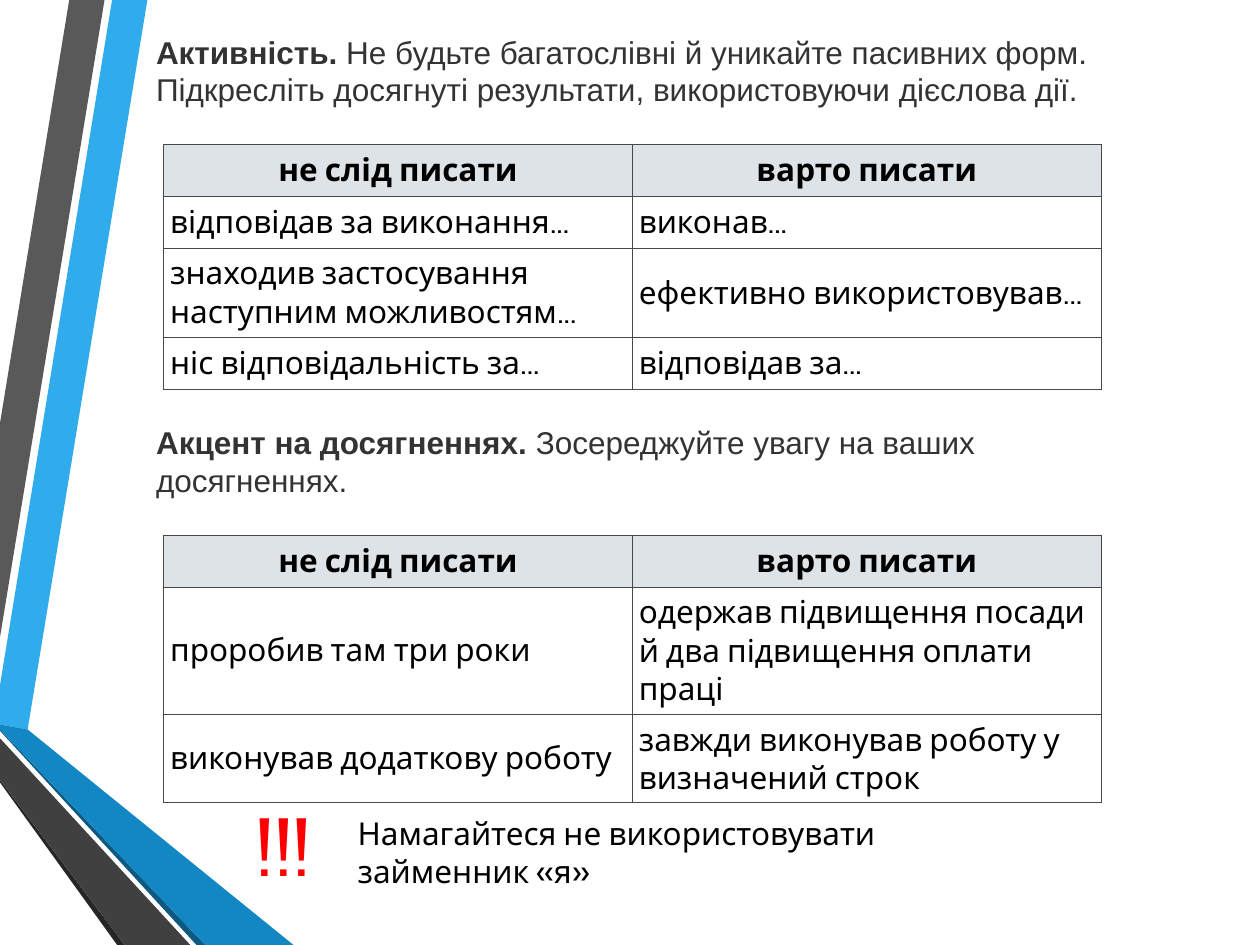
from lxml import etree
from pptx import Presentation
from pptx import util as u
from pptx.dml.color import RGBColor
from pptx.enum import text as t
from pptx.oxml import ns

HUES = {
    "sky": "30ACEC", "grey": "595959", "coal": "262626", "navy": "0C5A82",
    "blue": "1287C3", "dark": "404040", "edge": "484848", "head": "DEE3E7",
    "white": "FFFFFF", "black": "000000", "ink": "333333", "red": "FF0000",
}
COLS, ROWS = 100, 75
BANDS = [
    ("sky", [(0, 54.4), (0, 57.5), (2.2, 57.9), (11.7, 0), (8.9, 0)]),
    ("grey", [(8.3, 0), (5.5, 0), (0, 33.6), (0, 50.6)]),
    ("coal", [(0, 61.9), (0, 62.1), (9.3, 75), (9.9, 75)]),
    ("navy", [(0, 57.9), (0, 58), (15.6, 75), (16.3, 75)]),
    ("blue", [(0, 57.9), (16.3, 75), (23.3, 75), (2.2, 57.9), (0, 57.5)]),
    ("dark", [(0, 61.9), (9.9, 75), (15.1, 75), (0, 58.6)]),
]
HEAD = ("не слід писати", "варто писати")
ACTIVE = [
    HEAD,
    ("відповідав за виконання...", "виконав..."),
    ("знаходив застосування наступним можливостям...", "ефективно використовував..."),
    ("ніс відповідальність за...", "відповідав за..."),
]
RESULT = [
    HEAD,
    ("проробив там три роки", "одержав підвищення посади й два підвищення оплати праці"),
    ("виконував додаткову роботу", "завжди виконував роботу у визначений строк"),
]


def tint(hue):
    return RGBColor.from_string(HUES[hue])


def write(par, words, size=18, face="Cabin", hue="black", bold=False):
    run = par.add_run()
    run.text = words
    font = run.font
    font.size, font.name, font.bold = u.Pt(size), face, bold
    font.color.rgb = tint(hue)


class Deck:
    def __init__(self):
        self.show = Presentation()
        self.show.slide_width, self.show.slide_height = u.Inches(10), u.Inches(7.5)
        self.slide = self.show.slides.add_slide(self.show.slide_layouts[6])

    def x(self, cols):
        return round(self.show.slide_width * cols / COLS)

    def y(self, rows):
        return round(self.show.slide_height * rows / ROWS)

    def box(self, left, top, wide, high):
        return self.x(left), self.y(top), self.x(wide), self.y(high)

    def band(self, hue, spots):
        spots = [(self.x(a), self.y(b)) for a, b in spots]
        pen = self.slide.shapes.build_freeform(*spots[0])
        pen.add_line_segments(spots[1:], close=True)
        form = pen.convert_to_shape()
        form.shadow.inherit = False
        form.fill.solid()
        form.fill.fore_color.rgb = tint(hue)
        form.line.fill.background()

    def note(self, place, *runs):
        frame = self.slide.shapes.add_textbox(*self.box(*place)).text_frame
        frame.word_wrap = True
        for words, style in runs:
            write(frame.paragraphs[0], words, **style)

    def edge(self, cell):
        props = cell._tc.get_or_add_tcPr()
        for spot, side in enumerate(("a:lnL", "a:lnR", "a:lnT", "a:lnB")):
            line = etree.Element(ns.qn(side), w=str(u.Pt(0.75)))
            fill = etree.SubElement(line, ns.qn("a:solidFill"))
            etree.SubElement(fill, ns.qn("a:srgbClr"), val=HUES["edge"])
            props.insert(spot, line)

    def table(self, place, rows, highs):
        place = self.box(*place, sum(highs))
        grid = self.slide.shapes.add_table(len(rows), len(HEAD), *place).table
        for r, (row, high) in enumerate(zip(rows, highs)):
            grid.rows[r].height = self.y(high)
            for c, words in enumerate(row):
                self.cell(grid.cell(r, c), words, r == 0)

    def cell(self, cell, words, head):
        cell.margin_left = cell.margin_right = u.Inches(0.05)
        cell.margin_top = cell.margin_bottom = u.Inches(0.05)
        cell.vertical_anchor = t.MSO_ANCHOR.MIDDLE
        cell.fill.solid()
        cell.fill.fore_color.rgb = tint("head" if head else "white")
        par = cell.text_frame.paragraphs[0]
        par.alignment = t.PP_ALIGN.CENTER if head else t.PP_ALIGN.LEFT
        write(par, words, bold=head)
        self.edge(cell)


def main():
    deck = Deck()
    for hue, spots in BANDS:
        deck.band(hue, spots)
    body = dict(face="Arial", hue="ink")
    lead = dict(body, bold=True)
    deck.table((13, 11.5, 74.4), ACTIVE, (4.1, 4.1, 7.1, 4.1))
    deck.note(
        (11.4, 2.1, 85, 7.1),
        ("Активність.", lead),
        (" Не будьте багатослівні й уникайте пасивних форм. "
         "Підкресліть досягнуті результати, використовуючи дієслова дії.", body),
    )
    deck.note(
        (11.4, 33.1, 81.9, 7.1),
        ("Акцент на досягненнях. ", lead),
        ("Зосереджуйте увагу на ваших досягненнях.", body),
    )
    deck.table((13, 42.5, 74.4), RESULT, (4.1, 10.1, 7))
    deck.note((19.3, 63, 10.2, 8.4), ("!!!", dict(size=44, hue="red")))
    deck.note(
        (27.4, 64.1, 50, 7.1),
        ("Намагайтеся не використовувати займенник «я»", {}),
    )
    deck.show.save("out.pptx")


if __name__ == "__main__":
    main()
